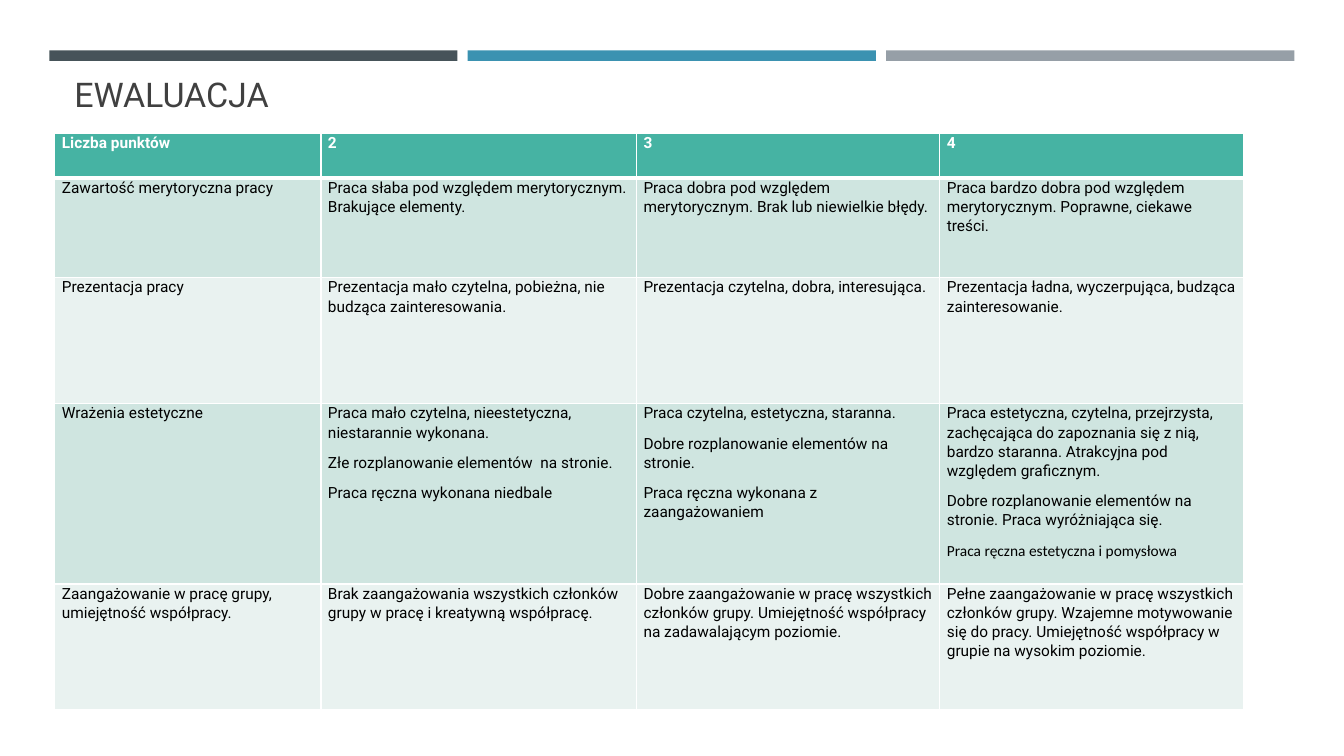
from lxml import etree
from pptx import Presentation
from pptx.dml.color import RGBColor
from pptx.enum.shapes import MSO_SHAPE
from pptx.enum.text import MSO_ANCHOR
from pptx.oxml.ns import qn
from pptx.util import Pt

RECT = MSO_SHAPE.RECTANGLE
TOP = MSO_ANCHOR.TOP
BOTTOM = MSO_ANCHOR.BOTTOM

WHITE = "FFFFFF"
HEAD = "46B3A3"
BANDS = ["E9F2F0", "CFE5E0"]
BARS = ["465359", "3B92B1", "969FA7"]
WIDTHS = [190.1, 225.4, 216.7, 216.7]
HEIGHTS = [31.7, 71.3, 90, 128.9, 90]
INSETS = {"margin_left": Pt(5), "margin_right": Pt(5),
          "margin_top": 0, "margin_bottom": 0, "vertical_anchor": TOP}
SPACING = {"line_spacing": 1.06, "space_after": Pt(8)}
OTHER = "Praca ręczna estetyczna i pomysłowa"  # the one line set in Calibri

# One list per row; a line break inside a cell starts a new paragraph
ROWS = [
    ["Liczba punktów", "2", "3", "4"],
    ["Zawartość merytoryczna pracy",
     "Praca słaba pod względem merytorycznym. Brakujące elementy.",
     "Praca dobra pod względem merytorycznym. Brak lub niewielkie błędy.",
     "Praca bardzo dobra pod względem merytorycznym. Poprawne, ciekawe treści."],
    ["Prezentacja pracy",
     "Prezentacja mało czytelna, pobieżna, nie budząca zainteresowania.",
     "Prezentacja czytelna, dobra, interesująca.",
     "Prezentacja ładna, wyczerpująca, budząca zainteresowanie."],
    ["Wrażenia estetyczne",
     "Praca mało czytelna, nieestetyczna, niestarannie wykonana.\n"
     "Złe rozplanowanie elementów  na stronie.\n"
     "Praca ręczna wykonana niedbale",
     "Praca czytelna, estetyczna, staranna.\n"
     "Dobre rozplanowanie elementów na stronie.\n"
     "Praca ręczna wykonana z zaangażowaniem",
     "Praca estetyczna, czytelna, przejrzysta, zachęcająca do zapoznania się "
     "z nią, bardzo staranna. Atrakcyjna pod względem graficznym.\n"
     "Dobre rozplanowanie elementów na stronie. Praca wyróżniająca się.\n"
     + OTHER],
    ["Zaangażowanie w pracę grupy, umiejętność współpracy.",
     "Brak zaangażowania wszystkich członków grupy w pracę i kreatywną "
     "współpracę.",
     "Dobre zaangażowanie w pracę wszystkich członków grupy. Umiejętność "
     "współpracy na zadawalającym poziomie.",
     "Pełne zaangażowanie w pracę wszystkich członków grupy. Wzajemne "
     "motywowanie się do pracy. Umiejętność współpracy w grupie na wysokim "
     "poziomie."],
]


def paint(target, color):
    """Fill a shape, cell or font with a solid hex colour."""
    target.fill.solid()
    target.fill.fore_color.rgb = RGBColor.from_string(color)


def assign(target, values):
    """Set every attribute named in a dict."""
    for name, value in values.items():
        setattr(target, name, value)


deck = Presentation()
assign(deck, {"slide_width": Pt(960), "slide_height": Pt(540)})
slide = deck.slides.add_slide(deck.slide_layouts[6])

# Bars along the top
for i, color in enumerate(BARS):
    bar = slide.shapes.add_shape(
        RECT, Pt(35.2 + 298.9 * i), Pt(36), Pt(291.6), Pt(7.5))
    bar.shadow.inherit = False
    bar.line.fill.background()
    paint(bar, color)

# Title
frame = slide.shapes.add_textbox(
    Pt(46.1), Pt(55.4), Pt(868.3), Pt(30.2)).text_frame
assign(frame, {"word_wrap": True, "vertical_anchor": BOTTOM})
title = frame.paragraphs[0]
title.line_spacing = 0.9
run = title.add_run()
run.text = "EWALUACJA"
assign(run.font, {"name": "Roboto", "size": Pt(24.3)})
paint(run.font, "404040")

# Grading table
table = slide.shapes.add_table(
    len(ROWS), len(WIDTHS), Pt(39.2), Pt(95.3),
    Pt(sum(WIDTHS)), Pt(sum(HEIGHTS))).table
for column, width in zip(table.columns, WIDTHS):
    column.width = Pt(width)

for r, texts in enumerate(ROWS):
    table.rows[r].height = Pt(HEIGHTS[r])
    for c, text in enumerate(texts):
        cell = table.cell(r, c)
        assign(cell, INSETS)
        paint(cell, BANDS[r % 2] if r else HEAD)

        # The rule under the header is thicker
        edges = {"lnL": 1, "lnR": 1,
                 "lnT": 3 if r == 1 else 1, "lnB": 1 if r else 3}
        props = cell._tc.get_or_add_tcPr()
        for i, (edge, width) in enumerate(edges.items()):
            line = etree.Element(qn("a:" + edge), w=str(Pt(width)))
            fill = etree.SubElement(line, qn("a:solidFill"))
            etree.SubElement(fill, qn("a:srgbClr"), val=WHITE)
            props.insert(i, line)

        cell.text = text
        for par in cell.text_frame.paragraphs:
            assign(par, SPACING)
            font = par.runs[0].font
            assign(font, {"name": "Calibri" if par.text == OTHER else "Roboto",
                          "size": Pt(11), "bold": r == 0})
            paint(font, "000000" if r else WHITE)

deck.save("out.pptx")
